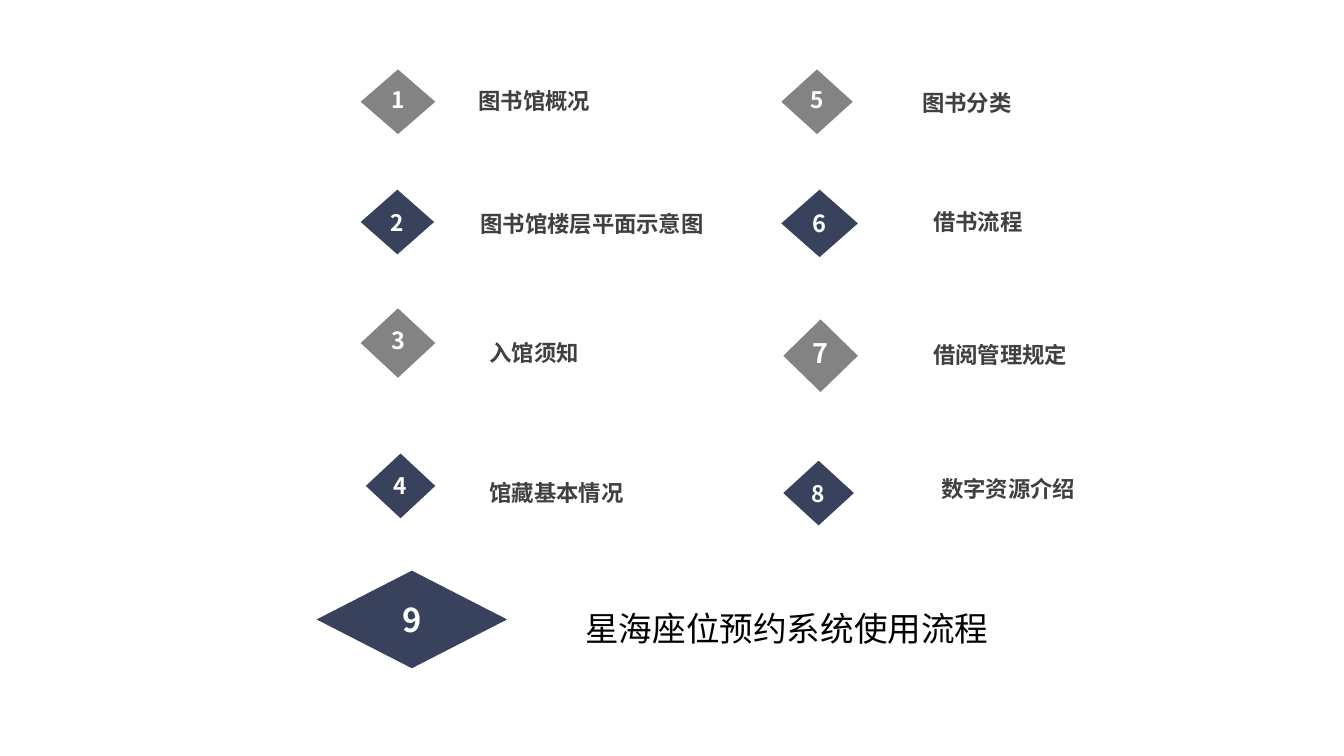
from pptx import Presentation
from pptx.dml.color import RGBColor
from pptx.enum.shapes import MSO_SHAPE as Shape
from pptx.enum.text import MSO_ANCHOR as Anchor, MSO_AUTO_SIZE as AutoSize, PP_ALIGN as Align
from pptx.oxml.ns import qn
from pptx.util import Cm, Pt

FONT = "Noto Sans CJK SC"
COLORS = {"navy": "39425D", "grey": "838383", "white": "FFFFFF",
          "label": "404040", "black": "000000"}

# Topic, diamond (left, top, width, height), digit size, label (left, top); lengths in cm
TOPICS = [
    ("图书馆概况", (9.09, 1.75, 1.88, 1.63), 16.2, (11.81, 2.08)),
    ("图书馆楼层平面示意图", (9.09, 4.78, 1.85, 1.63), 16.2, (11.86, 5.16)),
    ("入馆须知", (9.09, 7.77, 1.88, 1.75), 16.8, (12.09, 8.41)),
    ("馆藏基本情况", (9.22, 11.43, 1.75, 1.63), 16.2, (12.09, 11.96)),
    ("图书分类", (19.69, 1.75, 1.8, 1.63), 16.2, (22.99, 2.11)),
    ("借书流程", (19.69, 4.78, 1.93, 1.7), 16.8, (23.27, 5.11)),
    ("借阅管理规定", (19.74, 8.05, 1.88, 1.83), 19.2, (23.27, 8.48)),
    ("数字资源介绍", (19.74, 11.61, 1.78, 1.63), 16.2, (23.47, 11.84)),
    ("星海座位预约系统使用流程", (7.98, 14.38, 4.8, 2.46), 23.4, (14.5, 15.19)),
]
LABEL = {"size": Pt(16), "bold": True}
LAST_LABEL = {"size": Pt(24), "bold": False}


def rgb(name):
    return RGBColor.from_string(COLORS[name])


def write(shape, text, color, font_format):
    """Put one formatted line in a shape and return its paragraph."""
    frame = shape.text_frame
    frame.word_wrap = False
    para = frame.paragraphs[0]
    span = para.add_run()
    span.text = text
    for name, value in {"name": FONT, **font_format}.items():
        setattr(span.font, name, value)
    span.font.color.rgb = rgb(color)
    east_asian = span.font._element.makeelement(qn("a:ea"), {"typeface": FONT})
    span.font._element.append(east_asian)
    return para


def add_diamond(page, number, place, size, is_grey):
    diamond = page.shapes.add_shape(Shape.DIAMOND, *map(Cm, place))
    diamond.shadow.inherit = False
    diamond.fill.solid()
    diamond.fill.fore_color.rgb = rgb("grey" if is_grey else "navy")
    diamond.line.fill.background()
    para = write(diamond, str(number), "white", {"size": Pt(size), "bold": True})
    para.alignment = Align.CENTER
    if is_grey:
        para.line_spacing = 0.8
    diamond.text_frame.vertical_anchor = Anchor.MIDDLE


def add_label(page, topic, place, color, font_format):
    # One em per character plus the side margins
    width = len(topic) * font_format["size"] + Cm(0.51)
    height = int(font_format["size"] * 1.2) + Cm(0.26)
    box = page.shapes.add_textbox(*map(Cm, place), width, height)
    write(box, topic, color, font_format)
    box.text_frame.auto_size = AutoSize.SHAPE_TO_FIT_TEXT


def main():
    deck = Presentation()
    deck.slide_width, deck.slide_height = Cm(33.87), Cm(19.05)
    page = deck.slides.add_slide(deck.slide_layouts[6])

    # Odd topics are grey, even ones and the large last one navy
    for number, (topic, place, size, label_place) in enumerate(TOPICS, 1):
        is_last = number == len(TOPICS)
        add_diamond(page, number, place, size, number % 2 == 1 and not is_last)
        add_label(page, topic, label_place, "black" if is_last else "label",
                  LAST_LABEL if is_last else LABEL)

    deck.save("out.pptx")


if __name__ == "__main__":
    main()
